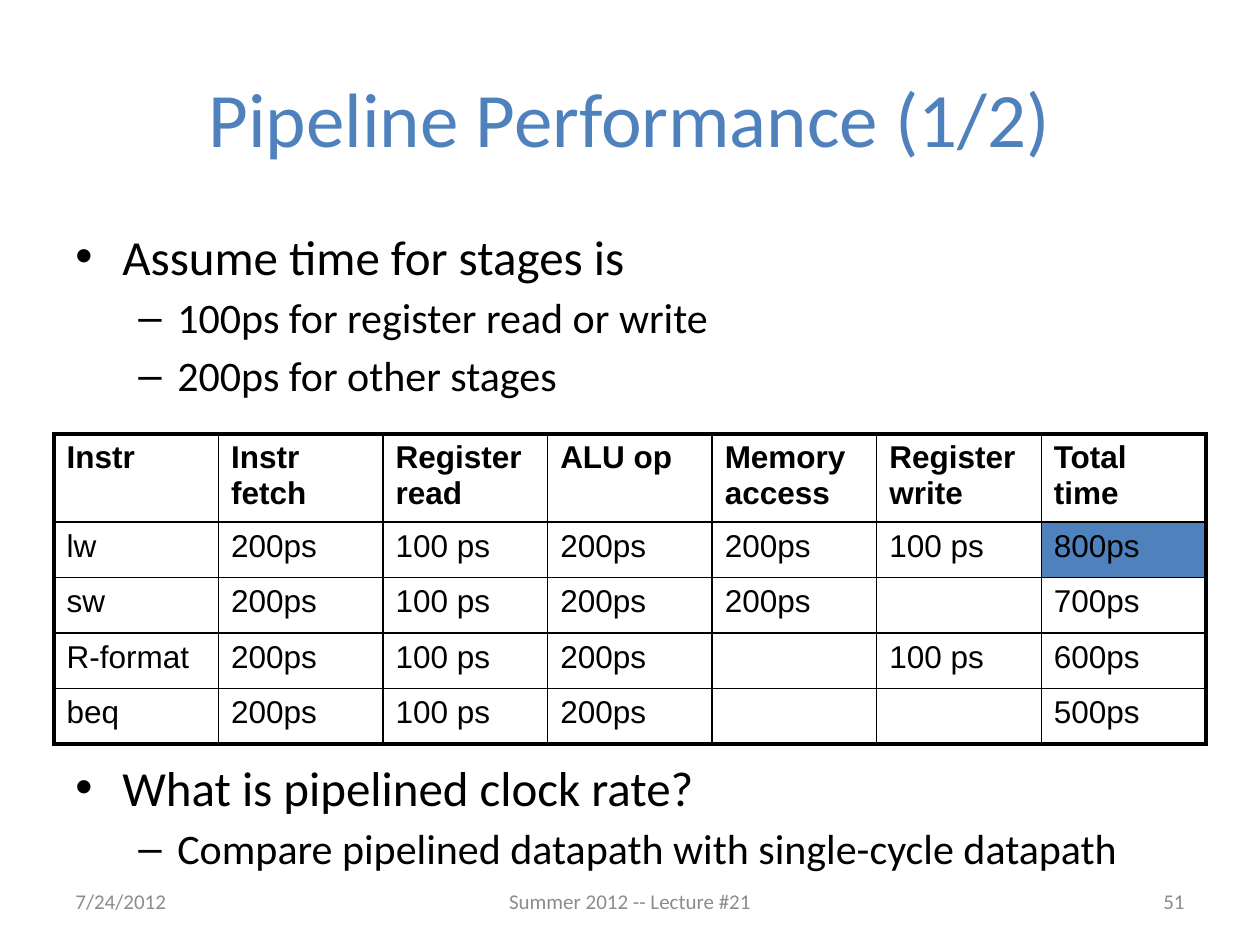
from dataclasses import dataclass

from lxml.etree import SubElement
from pptx import Presentation
from pptx.dml.color import RGBColor
from pptx.enum.text import MSO_ANCHOR, PP_ALIGN
from pptx.oxml import parse_xml
from pptx.oxml.ns import nsdecls, qn
from pptx.util import Pt

EMU_PER_PX = 914400 / 126


def px(length):
    return round(length * EMU_PER_PX)


@dataclass(frozen=True)
class Theme:
    accent: str = "4F81BD"
    ink: str = "000000"
    muted: str = "8C8C8C"
    text_font: str = "Calibri"
    table_font: str = "Arial"
    title_size: int = 44
    level_sizes: tuple = (28, 24)
    table_size: int = 18
    footer_size: int = 12
    outer_line: float = 2.25
    header_line: float = 1.5
    inner_line: float = 1


class SlideBuilder:
    BULLETS = (("•", 47, -47), ("–", 102, -39))  # character, margin, indent

    def __init__(self, page, theme):
        self.page = page
        self.theme = theme

    def add_span(self, para, text, size, color, font=None, bold=False):
        span = para.add_run()
        span.text = text
        span.font.name = font or self.theme.text_font
        span.font.size = Pt(size)
        span.font.bold = bold
        span.font.color.rgb = RGBColor.from_string(color)

    def add_frame(self, area, anchor):
        box = self.page.shapes.add_textbox(*map(px, area))
        frame = box.text_frame
        frame.word_wrap = True
        frame.vertical_anchor = anchor
        return frame

    def add_label(self, area, text, size, color, align):
        para = self.add_frame(area, MSO_ANCHOR.MIDDLE).paragraphs[0]
        para.alignment = align
        self.add_span(para, text, size, color)

    def add_bullets(self, area, items):
        frame = self.add_frame(area, MSO_ANCHOR.TOP)
        for index, (level, text) in enumerate(items):
            para = frame.add_paragraph() if index else frame.paragraphs[0]
            para.level = level
            if index:
                para.space_before = Pt(4)
            character, margin, indent = self.BULLETS[level]
            props = para._p.get_or_add_pPr()
            props.set("marL", str(px(margin)))
            props.set("indent", str(px(indent)))
            SubElement(props, qn("a:buFont"), typeface="Arial")
            SubElement(props, qn("a:buChar"), char=character)
            self.add_span(para, text, self.theme.level_sizes[level], self.theme.ink)

    def set_borders(self, cell, widths):
        """Draw the left, right, top and bottom borders, in that order."""
        props = cell._tc.get_or_add_tcPr()
        for index, (side, width) in enumerate(zip("LRTB", widths)):
            props.insert(index, parse_xml(
                f'<a:ln{side} {nsdecls("a")} w="{Pt(width)}"><a:solidFill>'
                f'<a:srgbClr val="{self.theme.ink}"/></a:solidFill></a:ln{side}>'))

    def add_table(self, area, header_height, rows, highlight):
        theme = self.theme
        row_count, column_count = len(rows), len(rows[0])
        table = self.page.shapes.add_table(row_count, column_count, *map(px, area)).table
        table.first_row = table.horz_banding = False
        _, _, width, height = area
        for column in table.columns:
            column.width = px(width / column_count)
        for row in table.rows:
            row.height = px((height - header_height) / (row_count - 1))
        table.rows[0].height = px(header_height)

        across = [theme.outer_line, *[theme.inner_line] * (column_count - 1), theme.outer_line]
        down = [theme.outer_line, theme.header_line,
                *[theme.inner_line] * (row_count - 2), theme.outer_line]
        for r, values in enumerate(rows):
            for c, value in enumerate(values):
                cell = table.cell(r, c)
                if (r, c) == highlight:
                    cell.fill.solid()
                    cell.fill.fore_color.rgb = RGBColor.from_string(theme.accent)
                else:
                    cell.fill.background()
                self.set_borders(cell, (*across[c:c + 2], *down[r:r + 2]))
                if value:
                    self.add_span(cell.text_frame.paragraphs[0], value, theme.table_size,
                                  theme.ink, theme.table_font, bold=r == 0)


STAGE_TIMES = [
    ["Instr", "Instr fetch", "Register read", "ALU op", "Memory access",
     "Register write", "Total time"],
    ["lw", "200ps", "100 ps", "200ps", "200ps", "100 ps", "800ps"],
    ["sw", "200ps", "100 ps", "200ps", "200ps", "", "700ps"],
    ["R-format", "200ps", "100 ps", "200ps", "", "100 ps", "600ps"],
    ["beq", "200ps", "100 ps", "200ps", "", "", "500ps"],
]


def main():
    theme = Theme()
    deck = Presentation()
    deck.slide_width, deck.slide_height = px(1260), px(945)
    builder = SlideBuilder(deck.slides.add_slide(deck.slide_layouts[6]), theme)

    builder.add_label((63, 38, 1134, 157), "Pipeline Performance (1/2)",
                      theme.title_size, theme.accent, PP_ALIGN.CENTER)
    builder.add_bullets((63, 220, 1134, 200), [
        (0, "Assume time for stages is"),
        (1, "100ps for register read or write"),
        (1, "200ps for other stages"),
    ])
    builder.add_bullets((63, 751, 1134, 150), [
        (0, "What is pipelined clock rate?"),
        (1, "Compare pipelined datapath with single-cycle datapath"),
    ])
    builder.add_table((54, 434, 1152, 306), 84, STAGE_TIMES, highlight=(1, 6))

    for left, width, text, align in (
        (63, 294, "7/24/2012", PP_ALIGN.LEFT),
        (430, 400, "Summer 2012 -- Lecture #21", PP_ALIGN.CENTER),
        (903, 294, "51", PP_ALIGN.RIGHT),
    ):
        builder.add_label((left, 876, width, 50), text, theme.footer_size, theme.muted, align)

    deck.save("out.pptx")


if __name__ == "__main__":
    main()
